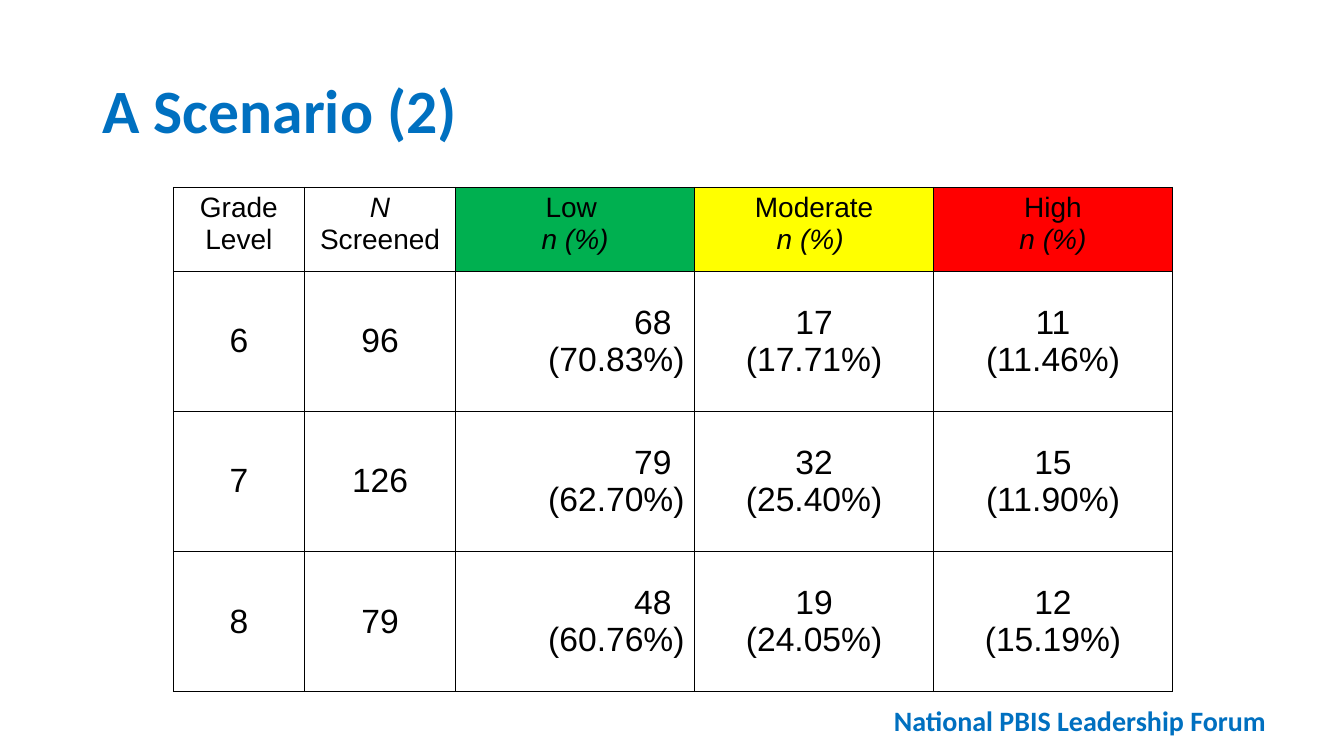
from pptx import Presentation
from pptx.dml.color import RGBColor
from pptx.enum.text import MSO_ANCHOR as Anchor, PP_ALIGN as Align
from pptx.oxml import parse_xml
from pptx.oxml.ns import nsdecls
from pptx.util import Inches, Pt

SLIDE_W, SLIDE_H = 13.33, 7.5
COLORS = {
    "accent": "0070C0", "text": "000000", "border": "000000", "plain": "FFFFFF",
    "low": "00B050", "moderate": "FFFF00", "high": "FF0000",
}
COL_WIDTHS = [1.3, 1.5, 2.37, 2.37, 2.37]
ROW_HEIGHTS = [0.83] + [1.39] * 3
LOW_COL, HIGH_COL = 2, 4

# Each header: fill, then (text, italic) for each paragraph
HEADERS = [
    ("plain", [("Grade Level", False)]),
    ("plain", [("N", True), ("Screened", False)]),
    ("low", [("Low ", False), ("n (%)", True)]),
    ("moderate", [("Moderate", False), ("n (%) ", True)]),
    ("high", [("High", False), ("n (%)", True)]),
]
# Grade, screened, then (count, share) for low, moderate and high risk
GRADES = [
    ("6", "96", ("68", "70.83%"), ("17", "17.71%"), ("11", "11.46%")),
    ("7", "126", ("79", "62.70%"), ("32", "25.40%"), ("15", "11.90%")),
    ("8", "79", ("48", "60.76%"), ("19", "24.05%"), ("12", "15.19%")),
]


def rgb(name):
    return RGBColor.from_string(COLORS[name])


def add_run(p, text, size, font="Arial", color="text", bold=False, italic=False):
    r = p.add_run()
    r.text = text
    r.font.name, r.font.size = font, Pt(size)
    r.font.bold, r.font.italic = bold, italic
    r.font.color.rgb = rgb(color)


def add_heading(s, text, box, size, align=Align.LEFT, anchor=Anchor.TOP, spacing=1.0):
    """Add a bold accent line; box is left, top, width, height in slide shares."""
    x, y, w, h = box
    sp = s.shapes.add_textbox(Inches(x * SLIDE_W), Inches(y * SLIDE_H),
                              Inches(w * SLIDE_W), Inches(h * SLIDE_H))
    tf = sp.text_frame
    tf.word_wrap = True
    tf.vertical_anchor = anchor
    p = tf.paragraphs[0]
    p.alignment, p.line_spacing = align, spacing
    add_run(p, text, size, "Calibri", "accent", bold=True)


def set_borders(cell):
    tcPr = cell._tc.get_or_add_tcPr()
    for i, side in enumerate(("lnL", "lnR", "lnT", "lnB")):
        tcPr.insert(i, parse_xml(
            f'<a:{side} {nsdecls("a")} w="{Pt(1)}"><a:solidFill>'
            f'<a:srgbClr val="{COLORS["border"]}"/></a:solidFill></a:{side}>'))


def fill_cell(cell, lines, size, fill="plain", align=Align.CENTER, anchor=Anchor.MIDDLE):
    cell.fill.solid()
    cell.fill.fore_color.rgb = rgb(fill)
    cell.vertical_anchor = anchor
    set_borders(cell)
    tf = cell.text_frame
    for i, (text, italic) in enumerate(lines):
        p = tf.add_paragraph() if i else tf.paragraphs[0]
        p.alignment = align
        add_run(p, text, size, italic=italic)


def value_lines(value, col):
    if isinstance(value, str):
        return [(value, False)]
    count, share = value
    tab = "\t" if col == LOW_COL else ""
    return [(count + tab, False), (f"({share})", False)]


def add_risk_table(s, left, top):
    table = s.shapes.add_table(
        len(ROW_HEIGHTS), len(COL_WIDTHS), Inches(left * SLIDE_W), Inches(top * SLIDE_H),
        Inches(sum(COL_WIDTHS)), Inches(sum(ROW_HEIGHTS))).table
    table.horz_banding = False
    table.first_row = False
    for column, width in zip(table.columns, COL_WIDTHS):
        column.width = Inches(width)
    for row, height in zip(table.rows, ROW_HEIGHTS):
        row.height = Inches(height)

    for col, (fill, lines) in enumerate(HEADERS):
        fill_cell(table.cell(0, col), lines, 20, fill, anchor=Anchor.TOP)
    for row, values in enumerate(GRADES, start=1):
        for col, value in enumerate(values):
            cell = table.cell(row, col)
            align = Align.RIGHT if col == LOW_COL else Align.CENTER
            fill_cell(cell, value_lines(value, col), 24, align=align)
            if col == HIGH_COL:
                cell.margin_left = cell.margin_right = 0
                cell.margin_top = cell.margin_bottom = 0


def main():
    prs = Presentation()
    prs.slide_width, prs.slide_height = Inches(SLIDE_W), Inches(SLIDE_H)
    s = prs.slides.add_slide(prs.slide_layouts[6])
    add_heading(s, "National PBIS Leadership Forum", (0.629, 0.924, 0.349, 0.059), 20,
                align=Align.CENTER)
    add_heading(s, "A Scenario (2)", (0.069, 0.053, 0.863, 0.193), 44,
                anchor=Anchor.MIDDLE, spacing=0.9)
    add_risk_table(s, 0.129, 0.248)
    prs.save("out.pptx")


if __name__ == "__main__":
    main()
